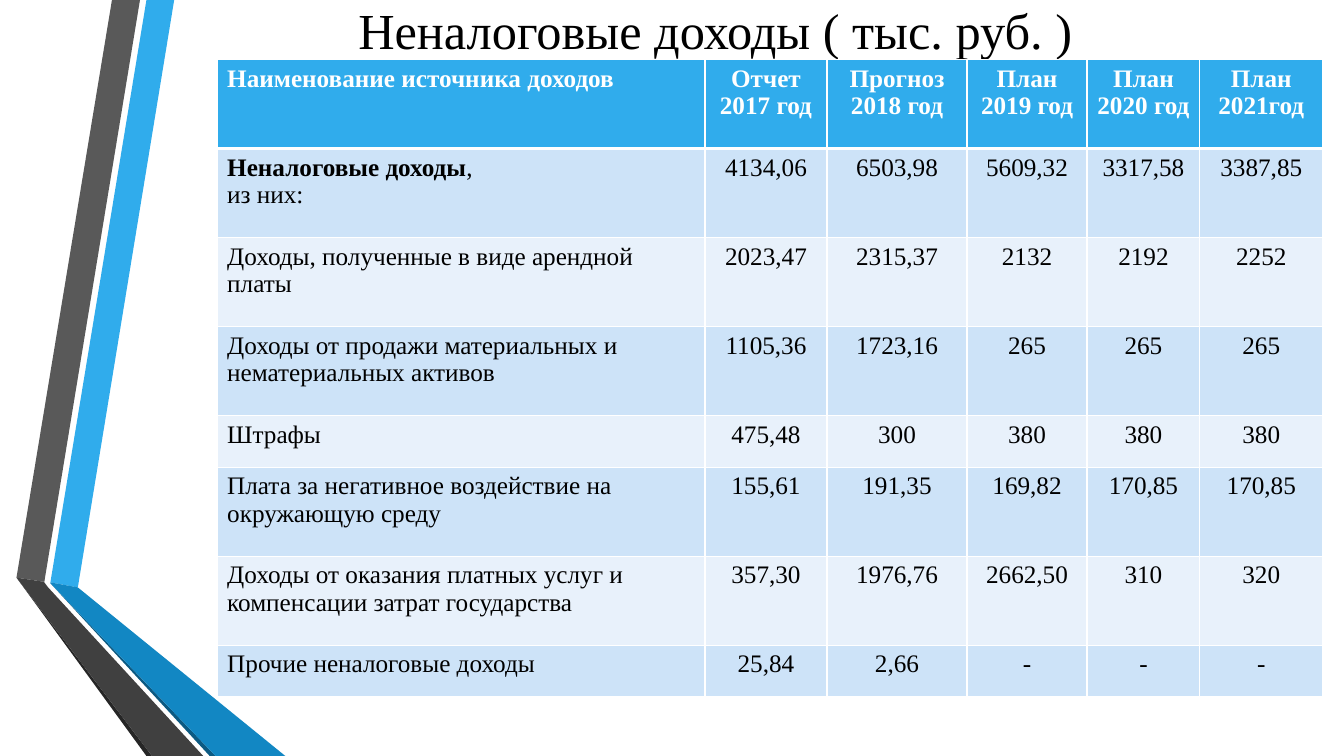
import pptx
import pptx.dml.color
import pptx.enum.text
import pptx.oxml
import pptx.oxml.ns
import pptx.util

Pt = pptx.util.Pt
RGBColor = pptx.dml.color.RGBColor
ALIGN = pptx.enum.text.PP_ALIGN
ANCHOR = pptx.enum.text.MSO_ANCHOR

WHITE = RGBColor(0xFF, 0xFF, 0xFF)
BLACK = RGBColor(0x00, 0x00, 0x00)
SKY = RGBColor(0x30, 0xAC, 0xEC)
BLUE = RGBColor(0x12, 0x87, 0xC3)
NAVY = RGBColor(0x0C, 0x5A, 0x82)
GREY = RGBColor(0x59, 0x59, 0x59)
DARK_GREY = RGBColor(0x40, 0x40, 0x40)
SOOT = RGBColor(0x26, 0x26, 0x26)
BAND_DARK = RGBColor(0xCD, 0xE3, 0xF8)
BAND_LIGHT = RGBColor(0xE8, 0xF1, 0xFB)

FONT = "Times New Roman"
TITLE = "Неналоговые доходы ( тыс. руб. )"
RIBBONS = [
    (SKY, [(36, 416), (55.6, 419.6), (124.4, 0), (104.6, 0)]),
    (GREY, [(100, 0), (80, 0), (11.8, 412.6), (31.7, 415.6)]),
    (SOOT, [(11.8, 412.6), (104.6, 540), (108.6, 540)]),
    (NAVY, [(36, 416.6), (149.8, 540), (154, 540)]),
    (BLUE, [(36, 416.6), (154, 540), (203.8, 540), (55.6, 419.6), (36, 416)]),
    (DARK_GREY, [(145.2, 540), (34.4, 419.6), (31.4, 415.6), (11.8, 412.6), (108.6, 540)]),
]
COLUMN_WIDTHS = [348.5, 87.1, 100.1, 85.7, 80.6, 87.8]
TALL, SHORT = 63.6, 36.9
HEADER = ["Наименование источника доходов", "Отчет 2017 год", "Прогноз 2018 год",
          "План 2019 год", "План 2020 год", "План 2021год"]
TOTAL_LABEL = [[("Неналоговые доходы", True), (",", False)], [("из них:", False)]]
INCOME = [
    (TALL, [TOTAL_LABEL, "4134,06", "6503,98", "5609,32", "3317,58", "3387,85"]),
    (TALL, ["Доходы, полученные в виде арендной платы",
            "2023,47", "2315,37", "2132", "2192", "2252"]),
    (TALL, ["Доходы от продажи материальных и нематериальных активов",
            "1105,36", "1723,16", "265", "265", "265"]),
    (SHORT, ["Штрафы", "475,48", "300", "380", "380", "380"]),
    (TALL, ["Плата за негативное воздействие на окружающую среду",
            "155,61", "191,35", "169,82", "170,85", "170,85"]),
    (TALL, ["Доходы от оказания платных услуг и компенсации затрат государства",
            "357,30", "1976,76", "2662,50", "310", "320"]),
    (SHORT, ["Прочие неналоговые доходы", "25,84", "2,66", "-", "-", "-"]),
]


def set_values(target, values):
    for name, value in values.items():
        setattr(target, name, value)


def write_text(frame, paragraphs, size, color, align):
    for index, spans in enumerate(paragraphs):
        para = frame.paragraphs[0] if index == 0 else frame.add_paragraph()
        para.alignment = align
        for text, bold in spans:
            span = para.add_run()
            span.text = text
            set_values(span.font, {"name": FONT, "size": Pt(size), "bold": bold})
            span.font.color.rgb = color


def add_ribbon(page, color, points):
    corners = [(Pt(x), Pt(y)) for x, y in points]
    builder = page.shapes.build_freeform(*corners[0], scale=1.0)
    builder.add_line_segments(corners[1:], close=True)
    ribbon = builder.convert_to_shape()
    ribbon.shadow.inherit = False
    ribbon.fill.solid()
    ribbon.fill.fore_color.rgb = color
    ribbon.line.fill.background()


def add_title(page):
    box = page.shapes.add_textbox(Pt(116.6), Pt(0), Pt(789), Pt(42.5))
    set_values(box.text_frame, {"word_wrap": True, "vertical_anchor": ANCHOR.MIDDLE,
                                "margin_top": 0, "margin_bottom": 0})
    write_text(box.text_frame, [[(TITLE, False)]], 36, BLACK, ALIGN.CENTER)


def set_borders(cell, widths):
    properties = cell._tc.get_or_add_tcPr()
    for index, (side, width) in enumerate(widths.items()):
        border = pptx.oxml.parse_xml(
            f'<a:ln{side} {pptx.oxml.ns.nsdecls("a")} w="{Pt(width)}">'
            f'<a:solidFill><a:srgbClr val="{WHITE}"/></a:solidFill></a:ln{side}>')
        properties.insert(index, border)


def fill_cell(cell, content, is_header, color, align, borders):
    paragraphs = [[(content, is_header)]] if isinstance(content, str) else content
    write_text(cell.text_frame, paragraphs, 18, WHITE if is_header else BLACK, align)
    cell.fill.solid()
    cell.fill.fore_color.rgb = color
    set_borders(cell, borders)


def add_income_table(page):
    rows = [(TALL, HEADER)] + INCOME
    height = sum(row_height for row_height, _ in rows)
    frame = page.shapes.add_table(len(rows), len(HEADER), Pt(155.1), Pt(42.5),
                                  Pt(sum(COLUMN_WIDTHS)), Pt(height))
    table = frame.table
    for column, width in zip(table.columns, COLUMN_WIDTHS):
        column.width = Pt(width)
    for row_index, (row_height, contents) in enumerate(rows):
        table.rows[row_index].height = Pt(row_height)
        is_header = row_index == 0
        band = BAND_DARK if row_index % 2 else BAND_LIGHT
        borders = {"L": 1, "R": 1, "T": 3 if row_index == 1 else 1, "B": 3 if is_header else 1}
        for column_index, content in enumerate(contents):
            fill_cell(table.cell(row_index, column_index), content, is_header,
                      SKY if is_header else band,
                      ALIGN.CENTER if column_index else ALIGN.LEFT, borders)


def main():
    deck = pptx.Presentation()
    set_values(deck, {"slide_width": Pt(960), "slide_height": Pt(540)})
    page = deck.slides.add_slide(deck.slide_layouts[6])
    for color, points in RIBBONS:
        add_ribbon(page, color, points)
    add_title(page)
    add_income_table(page)
    deck.save("out.pptx")


if __name__ == "__main__":
    main()
